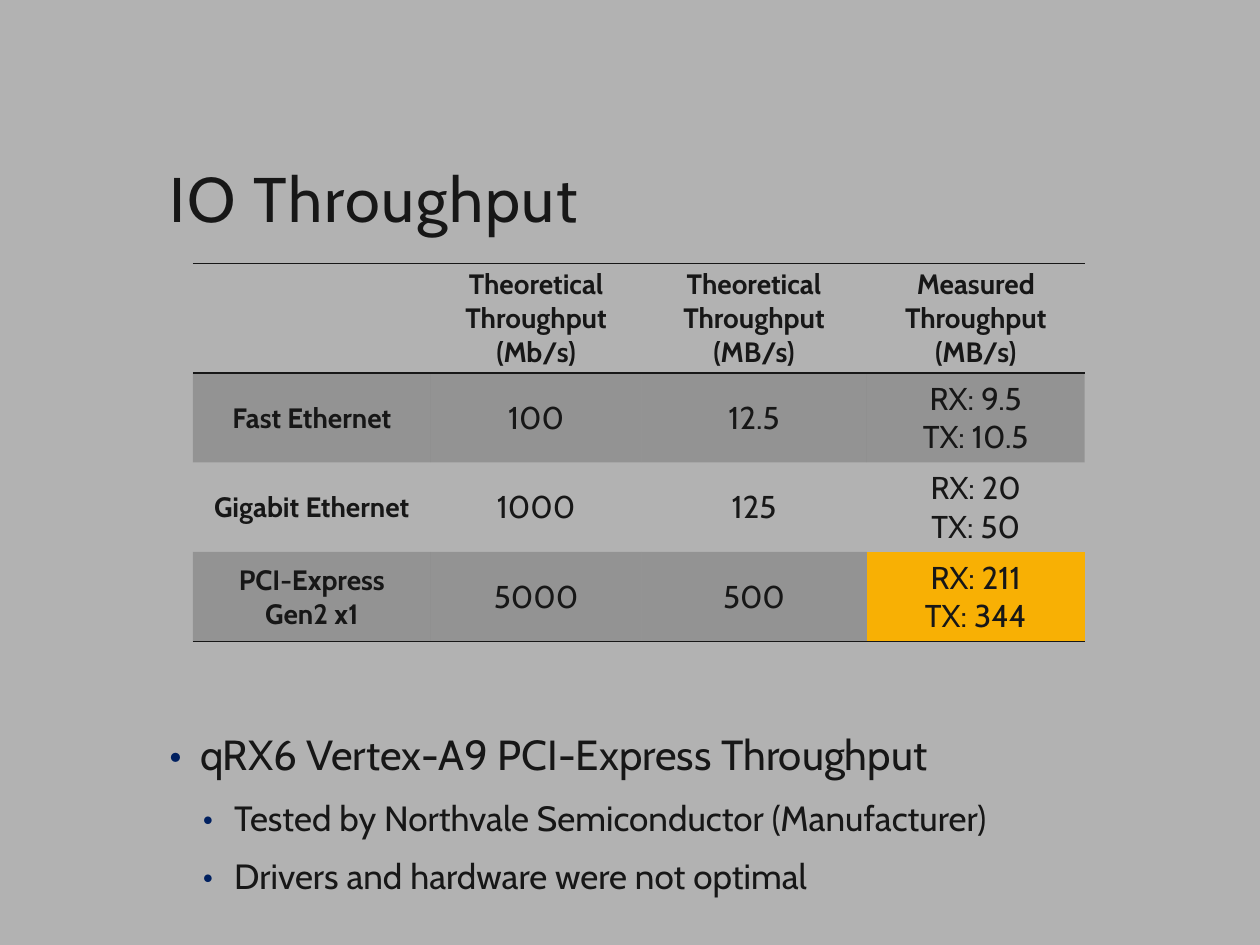
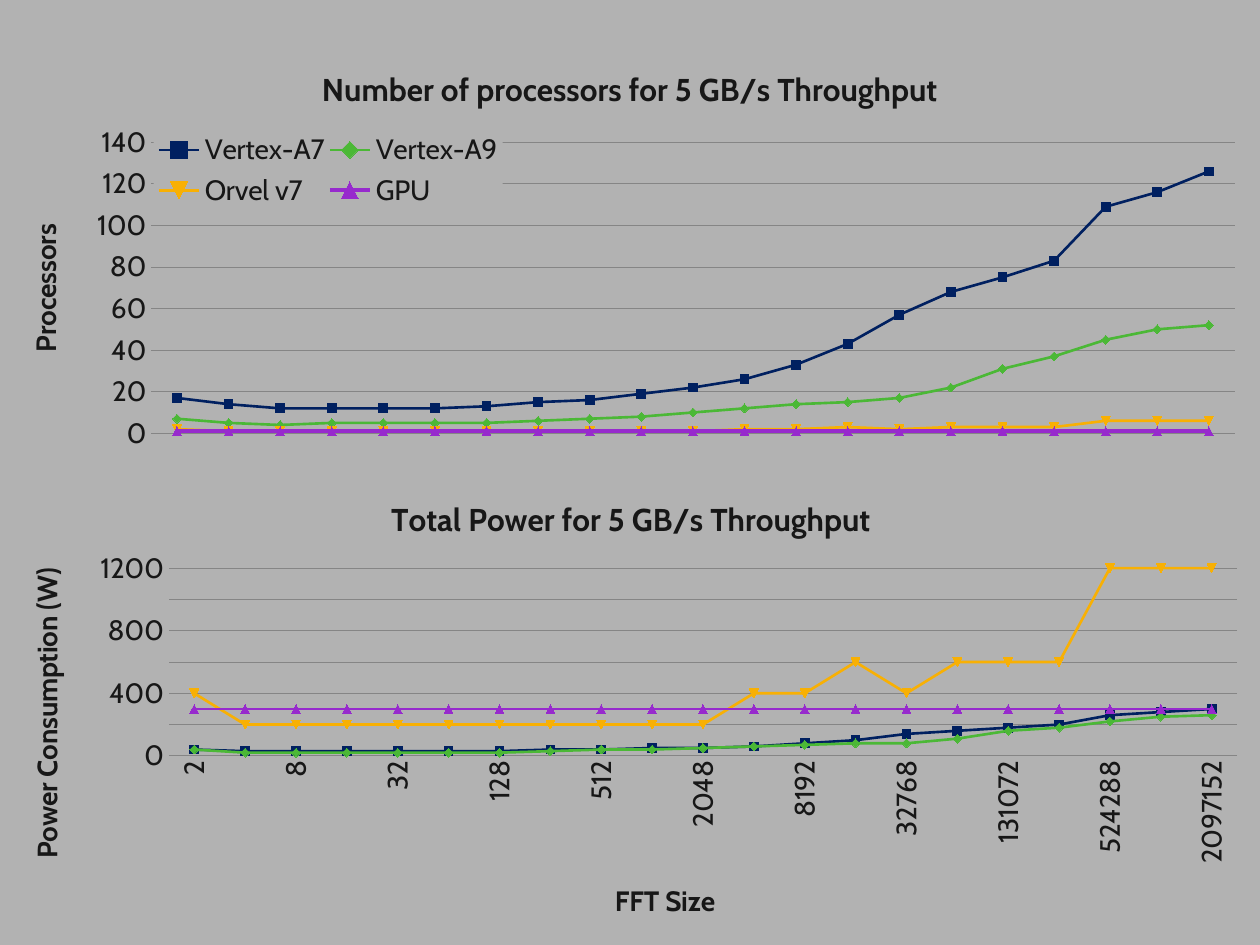
from lxml import etree
from pptx import Presentation, util as u
from pptx.chart.data import CategoryChartData
from pptx.dml.color import RGBColor
from pptx.enum import chart as ce, text
from pptx.oxml import ns, parse_xml

# Shared look
FONT = "Cabin"
COLORS = {"background": "B2B2B2", "ink": "171717", "grid": "858585",
          "highlight": "F8B004", "bullet": "002060"}
SERIES_COLORS = ["002060", "4BB836", "F8B004", "972ACD"]
WIDTH, HEIGHT = 10, 7.5

# Slide 1 content
TITLE = "IO Throughput"
TABLE_AT = (1.53, 2.09)
COLUMN_WIDTHS = [1.89, 1.67, 1.79, 1.73]
ROW_HEIGHTS = [0.87, 0.71, 0.71, 0.71]
TABLE = [
    ["", "Theoretical Throughput (Mb/s)", "Theoretical Throughput (MB/s)",
     "Measured Throughput (MB/s)"],
    ["Fast Ethernet", "100", "12.5", "RX: 9.5\nTX: 10.5"],
    ["Gigabit Ethernet", "1000", "125", "RX: 20\nTX: 50"],
    ["PCI-Express\nGen2 x1", "5000", "500", "RX: 211\nTX: 344"],
]
HIGHLIGHT_CELL = (3, 3)
BULLETS = [
    (0, "qRX6 Vertex-A9 PCI-Express Throughput"),
    (1, "Tested by Northvale Semiconductor (Manufacturer)"),
    (1, "Drivers and hardware were not optimal"),
]
# level: (size, space before, left margin, hanging indent)
BULLET_STYLES = {0: (24, 18, 0.24, 0.24), 1: (20, 12, 0.51, 0.25)}

# Slide 2 content; layouts are inches from the chart's corner
STEPS = range(1, 22)
CHARTS = [
    {
        "title": "Number of processors for 5 GB/s Throughput",
        "value_title": "Processors", "category_title": None,
        "at": (0, 0.36, WIDTH, 3.28), "maximum": 140, "unit": 20, "legend": True,
        "categories": [str(step) for step in STEPS],
        "line_widths": [1.5, 1.5, 1.5, 2.25],
        "series": {
            "Vertex-A7": [17, 14, 12, 12, 12, 12, 13, 15, 16, 19, 22, 26, 33, 43, 57,
                          68, 75, 83, 109, 116, 126],
            "Vertex-A9": [7, 5, 4, 5, 5, 5, 5, 6, 7, 8, 10, 12, 14, 15, 17, 22, 31, 37,
                          45, 50, 52],
            "Orvel v7": [2] + [1] * 10 + [2, 2, 3, 2, 3, 3, 3, 6, 6, 6],
            "GPU": [1] * 21,
        },
        "layouts": {
            "c:chart/c:title": (2.51, 0.13),
            ".//c:valAx/c:title": (0.17, 1.38),
            ".//c:plotArea": (1.2, 0.77, 8.6, 2.31),
            "c:chart/c:legend": (1.22, 0.64, 2.77, 0.7),
        },
    },
    {
        "title": "Total Power for 5 GB/s Throughput",
        "value_title": "Power Consumption (W)", "category_title": "FFT Size",
        "at": (0.01, 3.77, WIDTH, 3.73), "maximum": 1200, "unit": 200, "legend": False,
        # Every second size is labelled
        "categories": [str(2 ** step) if step % 2 else "" for step in STEPS],
        "line_widths": [1.5] * 4,
        "series": {
            "Series 1": [40, 30, 30, 30, 30, 30, 30, 40, 40, 50, 50, 60, 80, 100, 140,
                         160, 180, 200, 260, 280, 300],
            "Series 2": [40, 20, 20, 20, 20, 20, 20, 30, 40, 40, 50, 60, 70, 80, 80,
                         110, 160, 180, 220, 250, 260],
            "Series 3": [400] + [200] * 10 + [400, 400, 600, 400] + [600] * 3 + [1200] * 3,
            "Series 4": [300] * 21,
        },
        "layouts": {
            "c:chart/c:title": (3.05, 0.13),
            ".//c:valAx/c:title": (0.17, 0.7),
            ".//c:catAx/c:title": (4.83, 3.19),
            ".//c:plotArea": (1.33, 0.74, 8.48, 1.49),
        },
    },
]


def rgb(name):
    return RGBColor.from_string(COLORS.get(name, name))


def style(font, size, bold=False):
    font.name, font.size, font.bold = FONT, u.Pt(size), bold
    font.color.rgb = rgb("ink")


def child(parent, tag, **attributes):
    return etree.SubElement(parent, ns.qn(tag), attributes)


def add_slide(presentation):
    slide = presentation.slides.add_slide(presentation.slide_layouts[6])
    slide.background.fill.solid()
    slide.background.fill.fore_color.rgb = rgb("background")
    return slide


def add_text_frame(slide, *box):
    frame = slide.shapes.add_textbox(*map(u.Inches, box)).text_frame
    frame.word_wrap = True
    return frame


# Slide 1 parts
def add_title(slide):
    frame = add_text_frame(slide, 1.25, 0.42, 7.5, 1.5)
    frame.vertical_anchor = text.MSO_ANCHOR.BOTTOM
    paragraph = frame.paragraphs[0]
    paragraph.line_spacing = 0.9
    run = paragraph.add_run()
    run.text = TITLE
    style(run.font, 36)
    run._r.get_or_add_rPr().set("spc", "100")


def add_bullets(slide):
    frame = add_text_frame(slide, 1.25, 5.78, 7.49, 1.45)
    for index, (level, line) in enumerate(BULLETS):
        size, before, margin, hanging = BULLET_STYLES[level]
        paragraph = frame.add_paragraph() if index else frame.paragraphs[0]
        paragraph.text, paragraph.level = line, level
        properties = paragraph._p.get_or_add_pPr()
        properties.set("marL", str(u.Inches(margin)))
        properties.set("indent", str(-u.Inches(hanging)))
        child(child(properties, "a:buClr"), "a:srgbClr", val=COLORS["bullet"])
        child(properties, "a:buFont", typeface=FONT)
        child(properties, "a:buChar", char="•")
        paragraph.line_spacing = 0.9
        if index:
            paragraph.space_before = u.Pt(before)
        style(paragraph.font, size)


def add_rule(cell, side):
    line = child(cell._tc.get_or_add_tcPr(), f"a:ln{side}", w=str(u.Pt(1)))
    child(child(line, "a:solidFill"), "a:srgbClr", val=COLORS["ink"])


def fill_cell(cell, row, column):
    if (row, column) == HIGHLIGHT_CELL:
        cell.fill.solid()
        cell.fill.fore_color.rgb = rgb("highlight")
    elif row % 2:
        cell.fill.solid()
        cell.fill.fore_color.rgb = rgb("ink")
        color = cell._tc.tcPr.xpath("a:solidFill/a:srgbClr")[0]
        child(color, "a:alpha", val="20000")
    else:
        cell.fill.background()


def add_table(slide):
    last_row = len(TABLE) - 1
    size = (sum(COLUMN_WIDTHS), sum(ROW_HEIGHTS))
    table = slide.shapes.add_table(len(TABLE), len(TABLE[0]),
                                   *map(u.Inches, TABLE_AT + size)).table
    table.first_row = table.horz_banding = False
    # "No style, no grid"
    table._tbl.tblPr[0].text = "{2D5ABB26-0587-4C30-8999-92F81FD0307C}"
    for column, width in zip(table.columns, COLUMN_WIDTHS):
        column.width = u.Inches(width)
    for row, height in zip(table.rows, ROW_HEIGHTS):
        row.height = u.Inches(height)
    for row, values in enumerate(TABLE):
        for column, value in enumerate(values):
            cell = table.cell(row, column)
            cell.text = value
            cell.vertical_anchor = text.MSO_ANCHOR.MIDDLE
            cell.margin_left = cell.margin_right = cell.margin_top = u.Inches(0.01)
            cell.margin_bottom = 0
            if row == 0:
                add_rule(cell, "T")
            if row in (0, last_row):
                add_rule(cell, "B")
            fill_cell(cell, row, column)
            heading = row == 0 or column == 0
            for paragraph in cell.text_frame.paragraphs:
                paragraph.alignment = text.PP_ALIGN.CENTER
                style(paragraph.font, 16 if heading else 18, heading)


# Slide 2 parts
def shape_properties(fill):
    return parse_xml(f'<c:spPr {ns.nsdecls("c", "a")}>{fill}<a:ln><a:noFill/></a:ln></c:spPr>')


def place(element, box, chart_size):
    is_plot = element.tag == ns.qn("c:plotArea")
    for layout in element.findall(ns.qn("c:layout")):
        element.remove(layout)
    layout = etree.Element(ns.qn("c:layout"))
    manual = child(layout, "c:manualLayout")
    if is_plot:
        child(manual, "c:layoutTarget", val="inner")
    for key in "xy":
        child(manual, f"c:{key}Mode", val="edge")
    for key, length, whole in zip("xywh", box, chart_size * 2):
        child(manual, f"c:{key}", val=f"{length / whole:.4f}")
    element.insert(0 if is_plot else 1, layout)


def set_title(owner_title, words, size):
    owner_title.text_frame.text = words
    style(owner_title.text_frame.paragraphs[0].font, size, True)


def style_axes(chart, content):
    value, category = chart.value_axis, chart.category_axis
    value.minimum_scale, value.maximum_scale = 0, content["maximum"]
    value.major_unit = content["unit"]
    value.major_gridlines.format.line.color.rgb = rgb("grid")
    value.major_gridlines.format.line.width = u.Pt(0.5)
    value.format.line.fill.background()
    set_title(value.axis_title, content["value_title"], 16)
    for axis in (value, category):
        axis.major_tick_mark = axis.minor_tick_mark = ce.XL_TICK_MARK.NONE
        style(axis.tick_labels.font, 16)
    if content["category_title"]:
        set_title(category.axis_title, content["category_title"], 16)
        category.format.line.color.rgb = rgb("grid")
        category.format.line.width = u.Pt(0.75)
    else:
        category.visible = False


def add_chart(slide, content):
    data = CategoryChartData()
    data.categories = content["categories"]
    for name, values in content["series"].items():
        data.add_series(name, values)
    chart = slide.shapes.add_chart(ce.XL_CHART_TYPE.LINE_MARKERS,
                                   *map(u.Inches, content["at"]), data).chart
    style(chart.font, 10)
    chart.has_title = True
    set_title(chart.chart_title, content["title"], 18)
    chart.plots[0].vary_by_categories = False
    style_axes(chart, content)

    for series, color, width in zip(chart.plots[0].series, SERIES_COLORS,
                                    content["line_widths"]):
        series.smooth = False
        series.format.line.color.rgb = rgb(color)
        series.format.line.width = u.Pt(width)
        series.marker.size = 5
        series.marker.format.fill.solid()
        series.marker.format.fill.fore_color.rgb = rgb(color)
        series.marker.format.line.color.rgb = rgb(color)

    root = chart._chartSpace
    chart.has_legend = content["legend"]
    if chart.has_legend:
        chart.legend.position = ce.XL_LEGEND_POSITION.RIGHT
        chart.legend.include_in_layout = True
        style(chart.legend.font, 16)
        fill = f'<a:solidFill><a:srgbClr val="{COLORS["background"]}"/></a:solidFill>'
        root.xpath("c:chart/c:legend/c:overlay")[0].addnext(shape_properties(fill))

    # Clear backgrounds, upright labels and fixed positions
    root.xpath("c:chart")[0].addnext(shape_properties("<a:noFill/>"))
    root.xpath(".//c:plotArea")[0].append(shape_properties("<a:noFill/>"))
    for body in root.xpath(".//c:valAx/c:title//a:bodyPr | .//c:catAx/c:txPr/a:bodyPr"):
        body.set("rot", "-5400000")
        body.set("vert", "horz")
    for last in root.xpath(".//c:catAx/c:noMultiLvlLbl"):
        last.addprevious(etree.Element(ns.qn("c:tickLblSkip"), val="1"))
    for where, box in content["layouts"].items():
        place(root.xpath(where)[0], box, content["at"][2:])


def main():
    presentation = Presentation()
    presentation.slide_width, presentation.slide_height = u.Inches(WIDTH), u.Inches(HEIGHT)

    throughput = add_slide(presentation)
    add_title(throughput)
    add_bullets(throughput)
    add_table(throughput)

    scaling = add_slide(presentation)
    for content in CHARTS:
        add_chart(scaling, content)

    presentation.save("out.pptx")


if __name__ == "__main__":
    main()
